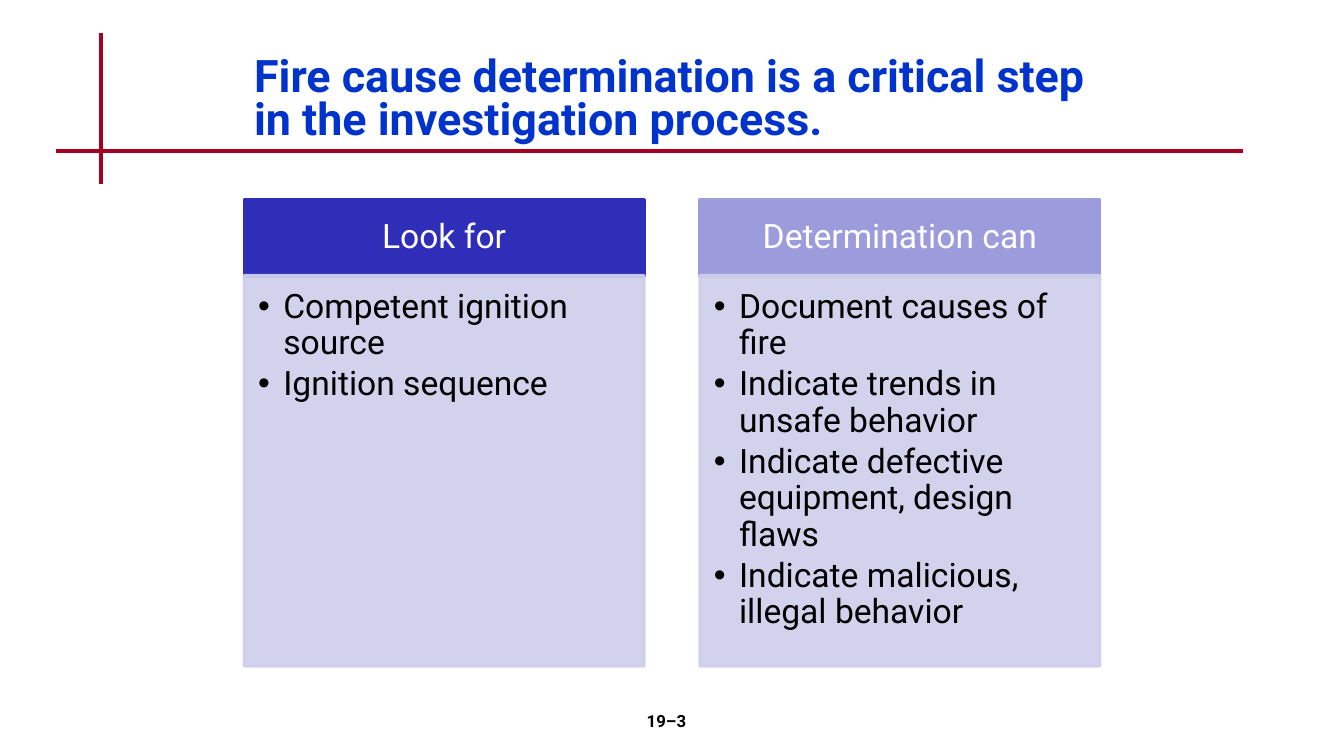
"""Build the fire cause determination slide."""
from dataclasses import dataclass

from lxml import etree
from pptx import Presentation
from pptx.dml.color import RGBColor
from pptx.enum.shapes import MSO_CONNECTOR
from pptx.enum.text import MSO_ANCHOR, MSO_AUTO_SIZE, PP_ALIGN
from pptx.oxml.ns import qn
from pptx.util import Inches, Pt

TOP, MIDDLE = MSO_ANCHOR.TOP, MSO_ANCHOR.MIDDLE
LEFT, CENTER = PP_ALIGN.LEFT, PP_ALIGN.CENTER
STRAIGHT = MSO_CONNECTOR.STRAIGHT
NO_FIT = MSO_AUTO_SIZE.NONE

TITLE = "Fire cause determination is a critical step in the investigation process."
PAGE = "19–3"
PANELS = [
    ("Look for", "2E2EB9", ["Competent ignition source", "Ignition sequence"]),
    ("Determination can", "9C9CDD", [
        "Document causes of fire",
        "Indicate trends in unsafe behavior",
        "Indicate defective equipment, design flaws",
        "Indicate malicious, illegal behavior",
    ]),
]
RULES = [(1, 0.33, 1, 1.83), (0.56, 1.5, 12.33, 1.5)]
EDGE, STEP, WIDE = 2.42, 4.52, 3.97
HEAD_TOP, HEAD_HIGH = 1.98, 0.76
BODY_TOP, BODY_HIGH = 2.73, 3.88


@dataclass(frozen=True)
class Theme:
    """Hold colours, font and type sizes."""
    font: str = "Roboto"
    title: str = "0033CC"
    rule: str = "A50021"
    panel: str = "CECEEC"
    light: str = "FFFFFF"
    dark: str = "000000"
    title_size: int = 32
    text_size: int = 24
    page_size: int = 12


THEME = Theme()


def place(shape, left, top, width, height):
    """Move and size a shape."""
    shape.left, shape.top = Inches(left), Inches(top)
    shape.width, shape.height = Inches(width), Inches(height)


def write(shape, lines, size, color, bold=False, align=LEFT, anchor=TOP,
          insets=(0.1, 0.05, 0.1, 0.05), space=1.0, after=0, bullet=False):
    """Fill a shape with formatted paragraphs."""
    frame = shape.text_frame
    frame.text = "\n".join(lines)
    frame.word_wrap = True
    frame.auto_size = NO_FIT
    frame.vertical_anchor = anchor
    (frame.margin_left, frame.margin_top,
     frame.margin_right, frame.margin_bottom) = map(Inches, insets)
    for para in frame.paragraphs:
        props = para._p.get_or_add_pPr()
        indent = Inches(0.25) if bullet else 0
        props.set("marL", str(indent))
        props.set("indent", str(-indent))
        if bullet:
            etree.SubElement(props, qn("a:buChar")).set("char", "•")
        else:
            etree.SubElement(props, qn("a:buNone"))
        para.alignment = align
        para.line_spacing = space
        para.space_before = Pt(0)
        para.space_after = Pt(after)
        for run in para.runs:
            run.font.name = THEME.font
            run.font.size = Pt(size)
            run.font.bold = bold
            run.font.color.rgb = RGBColor.from_string(color)


def paint(shape, color, alpha=100):
    """Give a shape one colour for fill and line."""
    shape.fill.solid()
    shape.line.width = Pt(2)
    for part in (shape.fill.fore_color, shape.line.color):
        part.rgb = RGBColor.from_string(color)
    if alpha < 100:
        for tone in shape._element.spPr.iter(qn("a:srgbClr")):
            etree.SubElement(tone, qn("a:alpha")).set("val", str(alpha * 1000))


def draw_rule(slide, ends):
    """Draw one heavy rule."""
    rule = slide.shapes.add_connector(STRAIGHT, *map(Inches, ends))
    rule.line.width = Pt(3)
    rule.line.color.rgb = RGBColor.from_string(THEME.rule)
    etree.SubElement(rule._element.spPr, qn("a:effectLst"))


def main():
    """Build and save the slide."""
    deck = Presentation()
    deck.slide_width, deck.slide_height = Inches(13.33), Inches(7.5)
    slide = deck.slides.add_slide(deck.slide_layouts.get_by_name("Comparison"))
    for ends in RULES:
        draw_rule(slide, ends)

    title, *slots = slide.placeholders
    place(title, EDGE, 0.5, 8.69, 1)
    write(title, [TITLE], THEME.title_size, THEME.title, bold=True,
          anchor=MIDDLE, space=0.8)

    pairs = zip(slots[::2], slots[1::2])
    for col, ((name, color, items), (head, body)) in enumerate(zip(PANELS, pairs)):
        left = EDGE + col * STEP
        place(head, left, HEAD_TOP, WIDE, HEAD_HIGH)
        paint(head, color)
        write(head, [name], THEME.text_size, THEME.light, align=CENTER,
              anchor=MIDDLE, insets=(0.19, 0.11, 0.19, 0.11), space=0.9)
        place(body, left, BODY_TOP, WIDE, BODY_HIGH)
        paint(body, THEME.panel, alpha=90)
        write(body, items, THEME.text_size, THEME.dark,
              insets=(0.14, 0.14, 0.19, 0.21), space=0.9, after=3.6, bullet=True)

    page = slide.shapes.add_textbox(*map(Inches, (5.22, 7, 2.78, 0.5)))
    write(page, [PAGE], THEME.page_size, THEME.dark, bold=True, align=CENTER)
    deck.save("out.pptx")


if __name__ == "__main__":
    main()
